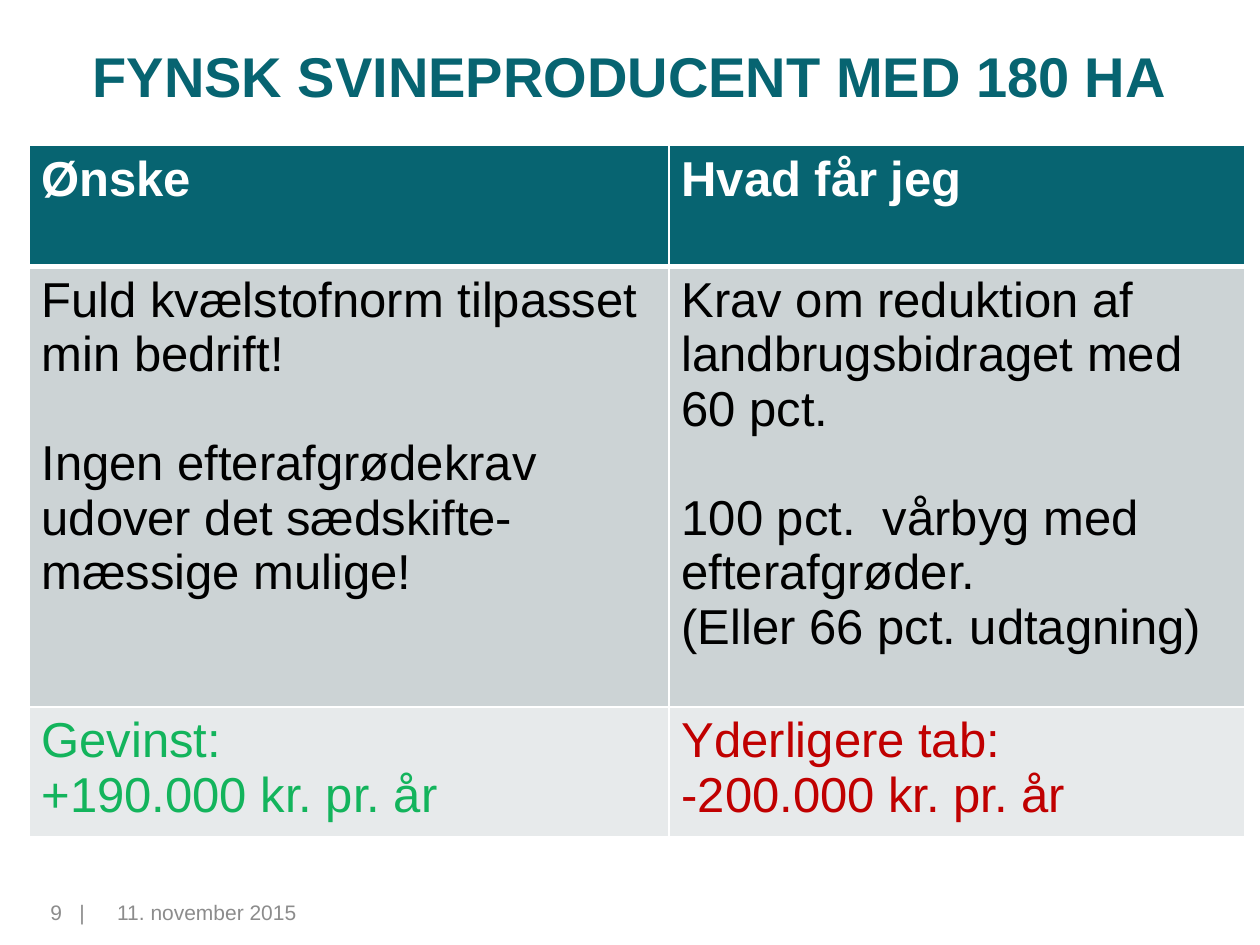
from dataclasses import dataclass

from lxml.etree import SubElement as Sub
from pptx import Presentation
from pptx.dml.color import RGBColor as Rgb
from pptx.enum.text import MSO_ANCHOR as Anchor, PP_ALIGN as Align
from pptx.oxml.ns import qn
from pptx.util import Inches, Pt

WIDE, HIGH = Inches(10), Inches(7.5)
HUES = {
    "teal": "076471", "white": "FFFFFF", "black": "000000", "grey": "8C8C8C",
    "mid": "CCD3D5", "pale": "E7EAEB", "green": "13B45C", "red": "C00000",
}
COLS = (0.508, 0.457)
LINE = 31


@dataclass
class Row:
    share: float
    fill: str
    inks: tuple[str, str]
    texts: tuple[list[str], list[str]]
    bold: bool = False
    gap: int = 0
    top: int = 1
    base: int = 1


ROWS = [
    Row(0.128, "teal", ("white", "white"), (["Ønske"], ["Hvad får jeg"]),
        bold=True, base=3),
    Row(0.466, "mid", ("black", "black"), (
        ["Fuld kvælstofnorm tilpasset min bedrift!",
         "Ingen efterafgrødekrav udover det sædskifte-mæssige mulige!"],
        ["Krav om reduktion af landbrugsbidraget med 60 pct.",
         "100 pct.  vårbyg med efterafgrøder.",
         "(Eller 66 pct. udtagning)"]), gap=LINE, top=3),
    Row(0.129, "pale", ("green", "red"), (
        ["Gevinst:", "+190.000 kr. pr. år"],
        ["Yderligere tab:", "-200.000 kr. pr. år"])),
]


def write(frame, texts: list[str], *, size: int, ink: str, bold: bool = False,
          align=Align.LEFT, gap: int = 0, tab: float = 0) -> None:
    frame.word_wrap = True
    for i, text in enumerate(texts):
        para = frame.paragraphs[0] if i == 0 else frame.add_paragraph()
        para.alignment = align
        if i == 1 and gap:
            para.space_before = Pt(gap)
        if tab:
            stops = Sub(para._p.get_or_add_pPr(), qn("a:tabLst"))
            Sub(stops, qn("a:tab"), pos=str(Inches(tab)), algn="l")
        run = para.add_run()
        run.text = text
        font = run.font
        font.name, font.size, font.bold = "Arial", Pt(size), bold
        font.color.rgb = Rgb.from_string(HUES[ink])


def edge(cell, top: int, base: int) -> None:
    props = cell._tc.get_or_add_tcPr()
    for side, width in zip("LRTB", (1, 1, top, base)):
        line = Sub(props, qn(f"a:ln{side}"), w=str(Pt(width)))
        fill = Sub(line, qn("a:solidFill"))
        Sub(fill, qn("a:srgbClr"), val=HUES["white"])


def label(slide, text: str, left: float, width: float, tab: float = 0) -> None:
    box = slide.shapes.add_textbox(int(left * WIDE), int(0.945 * HIGH),
                                   int(width * WIDE), int(0.053 * HIGH))
    box.text_frame.margin_left = 0
    write(box.text_frame, [text], size=12, ink="grey", tab=tab)


def grid(slide) -> None:
    table = slide.shapes.add_table(
        len(ROWS), len(COLS), int(0.023 * WIDE), int(0.154 * HIGH),
        int(sum(COLS) * WIDE), int(sum(row.share for row in ROWS) * HIGH)).table
    table.first_row = table.horz_banding = False
    for col, share in zip(table.columns, COLS):
        col.width = int(share * WIDE)
    for i, row in enumerate(ROWS):
        table.rows[i].height = int(row.share * HIGH)
        for j, (ink, texts) in enumerate(zip(row.inks, row.texts)):
            cell = table.cell(i, j)
            edge(cell, row.top, row.base)
            cell.fill.solid()
            cell.fill.fore_color.rgb = Rgb.from_string(HUES[row.fill])
            write(cell.text_frame, texts, size=28, ink=ink, bold=row.bold,
                  gap=row.gap)


def main() -> None:
    deck = Presentation()
    deck.slide_width, deck.slide_height = WIDE, HIGH
    slide = deck.slides.add_slide(deck.slide_layouts[5])
    title = slide.shapes.title
    title.left, title.top = int(0.012 * WIDE), int(-0.004 * HIGH)
    title.width, title.height = int(0.976 * WIDE), int(0.167 * HIGH)
    title.text_frame.vertical_anchor = Anchor.MIDDLE
    write(title.text_frame, ["FYNSK SVINEPRODUCENT MED 180 HA"], size=32,
          ink="teal", bold=True, align=Align.CENTER)
    label(slide, "11. november 2015", 0.093, 0.223)
    label(slide, "9\t|", 0.04, 0.045, tab=0.23)
    grid(slide)
    deck.save("out.pptx")


if __name__ == "__main__":
    main()
